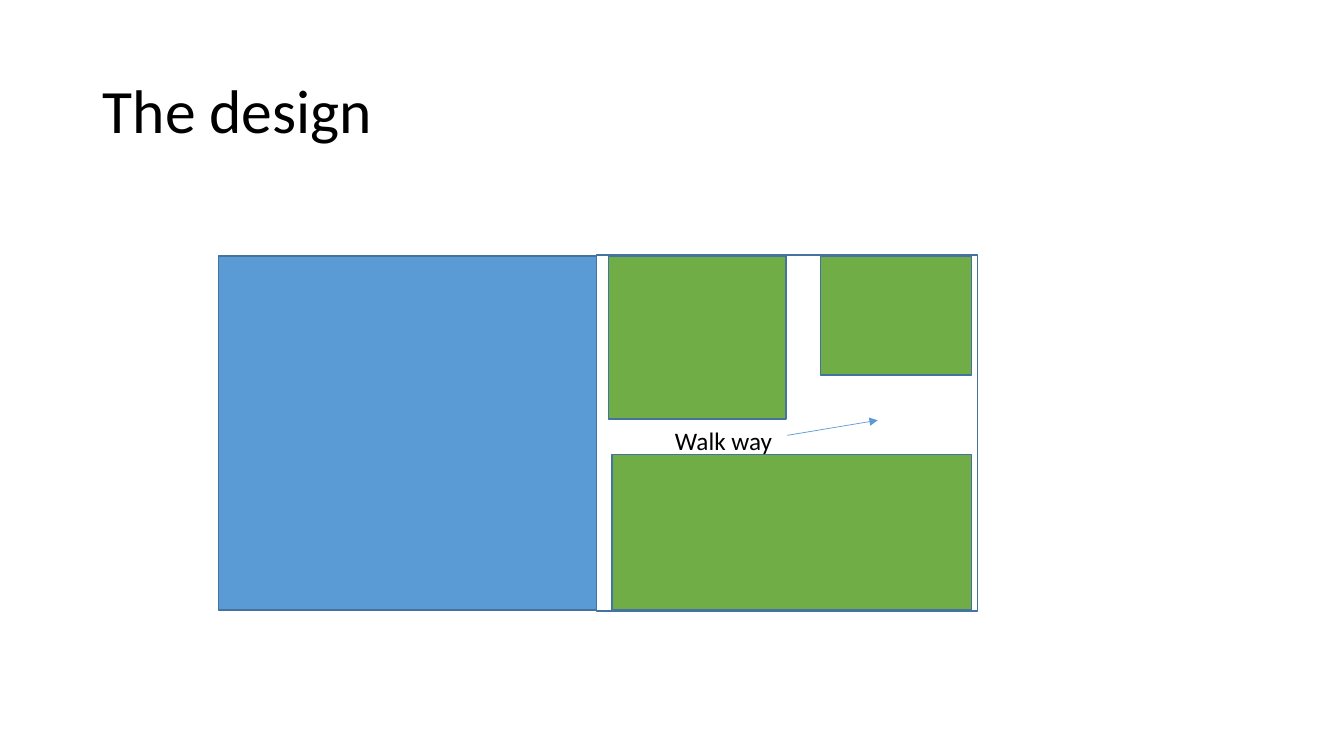
"""Build the slide showing the garden design with its walk way."""
from typing import NamedTuple

from pptx import Presentation
from pptx.dml.color import RGBColor
from pptx.enum import shapes, text
from pptx.oxml import ns, xmlchemy
from pptx.util import Cm, Pt

BLACK = RGBColor(0x00, 0x00, 0x00)
WHITE = RGBColor(0xFF, 0xFF, 0xFF)
BLUE = RGBColor(0x5B, 0x9B, 0xD5)
GREEN = RGBColor(0x70, 0xAD, 0x47)
OUTLINE = RGBColor(0x43, 0x73, 0x9E)
FONT = "Calibri"


class Box(NamedTuple):
    left: float
    top: float
    width: float
    height: float


class Area(NamedTuple):
    box: Box
    color: RGBColor


class Label(NamedTuple):
    wording: str
    box: Box
    size: float
    anchor: text.MSO_ANCHOR
    spacing: float


HOUSE_TOP = 6.45
AREAS = [
    Area(Box(5.51, HOUSE_TOP, 18.97, 8.92), BLUE),
    Area(Box(15.04, 6.43, 9.6, 8.97), WHITE),
    Area(Box(15.34, HOUSE_TOP, 4.47, 4.11), GREEN),
    Area(Box(15.42, 11.46, 9.07, 3.91), GREEN),
    Area(Box(20.68, HOUSE_TOP, 3.81, 3), GREEN),
]
LABELS = [
    Label("The design", Box(2.34, 1.02, 29.21, 3.68), 44, text.MSO_ANCHOR.MIDDLE, 0.9),
    Label("Walk way", Box(16.76, 10.59, 3.91, 1.02), 18, text.MSO_ANCHOR.TOP, 1),
]


def draw_area(slide, area: Area) -> None:
    shape = slide.shapes.add_shape(shapes.MSO_SHAPE.RECTANGLE, *map(Cm, area.box))
    shape.shadow.inherit = False
    shape.fill.solid()
    shape.fill.fore_color.rgb = area.color
    shape.line.color.rgb = OUTLINE
    shape.line.width = Pt(1)


def draw_label(slide, label: Label) -> None:
    frame = slide.shapes.add_textbox(*map(Cm, label.box)).text_frame
    frame.word_wrap = True
    frame.vertical_anchor = label.anchor
    paragraph = frame.paragraphs[0]
    paragraph.line_spacing = label.spacing
    run = paragraph.add_run()
    run.text = label.wording
    run.font.name = FONT
    run.font.size = Pt(label.size)
    run.font.color.rgb = BLACK


def draw_arrow(slide, start: tuple[float, float], end: tuple[float, float]) -> None:
    connector = slide.shapes.add_connector(
        shapes.MSO_CONNECTOR.STRAIGHT, *map(Cm, start + end))
    connector.line.color.rgb = BLUE
    connector.line.width = Pt(0.5)
    line = connector.line._get_or_add_ln()
    line.append(xmlchemy.OxmlElement("a:tailEnd"))
    line.find(ns.qn("a:tailEnd")).set("type", "triangle")
    connector._element.spPr.append(xmlchemy.OxmlElement("a:effectLst"))


def main() -> None:
    presentation = Presentation()
    presentation.slide_width, presentation.slide_height = Cm(33.87), Cm(19.05)
    slide = presentation.slides.add_slide(presentation.slide_layouts[6])
    for area in AREAS:
        draw_area(slide, area)
    for label in LABELS:
        draw_label(slide, label)
    draw_arrow(slide, (19.84, 10.97), (22.12, 10.59))
    presentation.save("out.pptx")


if __name__ == "__main__":
    main()
